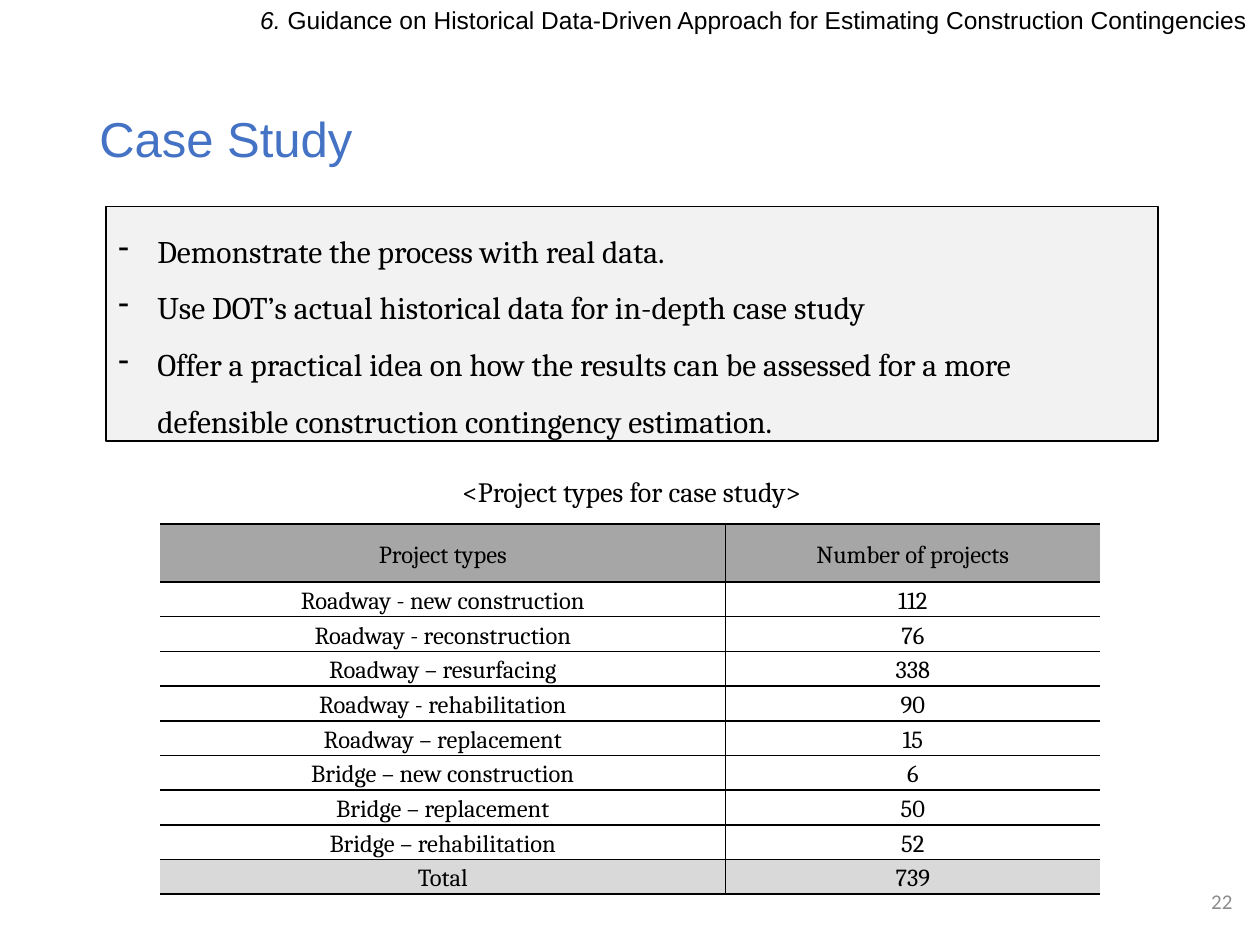
import pptx
import pptx.dml.color
import pptx.enum.shapes
import pptx.enum.text
import pptx.oxml
import pptx.oxml.ns
import pptx.util

Inches = pptx.util.Inches
Pt = pptx.util.Pt
RGBColor = pptx.dml.color.RGBColor
ALIGN = pptx.enum.text.PP_ALIGN
ANCHOR = pptx.enum.text.MSO_ANCHOR

BLACK = RGBColor(0x00, 0x00, 0x00)
WHITE = RGBColor(0xFF, 0xFF, 0xFF)
TITLE_BLUE = RGBColor(0x44, 0x72, 0xC4)
NUMBER_GRAY = RGBColor(0x8C, 0x8C, 0x8C)
PANEL_GRAY = RGBColor(0xF2, 0xF2, 0xF2)
HEADER_GRAY = RGBColor(0xA6, 0xA6, 0xA6)
TOTAL_GRAY = RGBColor(0xD9, 0xD9, 0xD9)

GOALS = [
    "Demonstrate the process with real data.",
    "Use DOT’s actual historical data for in-depth case study",
    "Offer a practical idea on how the results can be assessed for a more "
    "defensible construction contingency estimation.",
]
PROJECTS = [
    ("Project types", "Number of projects"),
    ("Roadway - new construction", "112"),
    ("Roadway - reconstruction", "76"),
    ("Roadway – resurfacing", "338"),
    ("Roadway - rehabilitation", "90"),
    ("Roadway – replacement", "15"),
    ("Bridge – new construction", "6"),
    ("Bridge – replacement", "50"),
    ("Bridge – rehabilitation", "52"),
    ("Total", "739"),
]


def write_text(paragraph, text, size, font="Cambria", color=BLACK, italic=False,
               align=ALIGN.LEFT, line_spacing=1.0, before=0, after=0):
    """Append a formatted run to a paragraph and set the paragraph format."""
    paragraph.alignment = align
    paragraph.line_spacing = line_spacing
    paragraph.space_before = Pt(before)
    paragraph.space_after = Pt(after)
    run = paragraph.add_run()
    run.text = text
    run.font.size = Pt(size)
    run.font.name = font
    run.font.color.rgb = color
    run.font.italic = italic


def add_text_box(slide, box, anchor=ANCHOR.TOP):
    """Add a wrapping text box and return its first paragraph."""
    frame = slide.shapes.add_textbox(*map(Inches, box)).text_frame
    frame.word_wrap = True
    frame.vertical_anchor = anchor
    return frame.paragraphs[0]


def add_panel(slide, box, line_color, fill_color=None):
    """Add an outlined rectangle and return its text frame."""
    shape = slide.shapes.add_shape(
        pptx.enum.shapes.MSO_SHAPE.RECTANGLE, *map(Inches, box))
    shape.shadow.inherit = False
    if fill_color is None:
        shape.fill.background()
    else:
        shape.fill.solid()
        shape.fill.fore_color.rgb = fill_color
    shape.line.color.rgb = line_color
    shape.line.width = Pt(0.75)
    frame = shape.text_frame
    frame.word_wrap = True
    frame.vertical_anchor = ANCHOR.TOP
    frame.auto_size = pptx.enum.text.MSO_AUTO_SIZE.SHAPE_TO_FIT_TEXT
    return frame


def add_header(slide, box):
    """Add the chapter line at the top of the slide."""
    paragraph = add_text_box(slide, box)
    style = dict(size=14, font="Arial", align=ALIGN.RIGHT, line_spacing=0.9, before=10)
    write_text(paragraph, "6. ", italic=True, **style)
    write_text(paragraph, "Guidance on Historical Data-Driven Approach for "
               "Estimating Construction Contingencies", **style)


def add_title(slide, box):
    """Add the slide title."""
    write_text(add_text_box(slide, box, ANCHOR.MIDDLE), "Case Study", size=28,
               font="Arial", color=TITLE_BLUE, line_spacing=0.9)


def add_goals(slide, box):
    """Add the shaded panel with the dashed list of goals."""
    frame = add_panel(slide, box, BLACK, PANEL_GRAY)
    for index, goal in enumerate(GOALS):
        paragraph = frame.add_paragraph() if index else frame.paragraphs[0]
        write_text(paragraph, goal, size=18, line_spacing=1.5)
        properties = paragraph._p.get_or_add_pPr()
        properties.set("marL", str(Inches(0.31)))
        properties.set("indent", str(Inches(-0.31)))
        bullet = pptx.oxml.parse_xml(
            f'<a:buChar {pptx.oxml.ns.nsdecls("a")} char="-"/>')
        properties.append(bullet)


def add_caption(slide, box):
    """Add the caption above the table."""
    frame = add_panel(slide, box, WHITE)
    write_text(frame.paragraphs[0], "<Project types for case study>", size=16,
               align=ALIGN.CENTER)


def set_borders(cell, visible_sides):
    """Draw black one-point lines on the given sides and clear the others."""
    properties = cell._tc.get_or_add_tcPr()
    for position, side in enumerate("LRTB"):
        paint = ('<a:solidFill><a:srgbClr val="000000"/></a:solidFill>'
                 if side in visible_sides else "<a:noFill/>")
        border = pptx.oxml.parse_xml(
            f'<a:ln{side} {pptx.oxml.ns.nsdecls("a")} w="{Pt(1)}">{paint}</a:ln{side}>')
        properties.insert(position, border)


def add_project_table(slide, box):
    """Add the table of project types and counts."""
    table = slide.shapes.add_table(
        len(PROJECTS), 2, *map(Inches, box)).table
    left, top, width, height = box
    first_width, header_height = 4.49, 0.46
    table.columns[0].width = Inches(first_width)
    table.columns[1].width = Inches(width - first_width)
    row_height = (height - header_height) / (len(PROJECTS) - 1)
    fills = {0: HEADER_GRAY, len(PROJECTS) - 1: TOTAL_GRAY}
    for row, values in enumerate(PROJECTS):
        table.rows[row].height = Inches(row_height if row else header_height)
        for column, value in enumerate(values):
            cell = table.cell(row, column)
            cell.vertical_anchor = ANCHOR.MIDDLE
            cell.margin_left = cell.margin_right = Inches(0.09)
            cell.margin_top = cell.margin_bottom = 0
            if row in fills:
                cell.fill.solid()
                cell.fill.fore_color.rgb = fills[row]
            else:
                cell.fill.background()
            set_borders(cell, "LTB" if column else "RTB")
            write_text(cell.text_frame.paragraphs[0], value, size=14,
                       align=ALIGN.CENTER, line_spacing=1.15, before=3, after=3)


def add_slide_number(slide, box):
    """Add the page number at the lower right."""
    write_text(add_text_box(slide, box, ANCHOR.MIDDLE), "22", size=12,
               font="Calibri", color=NUMBER_GRAY, align=ALIGN.RIGHT)


def main():
    """Build the slide and save the presentation."""
    presentation = pptx.Presentation()
    presentation.slide_width = Inches(10)
    presentation.slide_height = Inches(7.5)
    slide = presentation.slides.add_slide(presentation.slide_layouts[6])
    add_title(slide, (0.69, 0.4, 8.62, 1.45))
    add_slide_number(slide, (7.63, 6.95, 2.25, 0.4))
    add_project_table(slide, (1.27, 4.16, 7.46, 2.94))
    add_goals(slide, (0.84, 1.64, 8.35, 1.86))
    add_caption(slide, (3.13, 3.72, 3.77, 0.37))
    add_header(slide, (1.91, 0.02, 8.09, 0.4))
    presentation.save("out.pptx")


if __name__ == "__main__":
    main()
